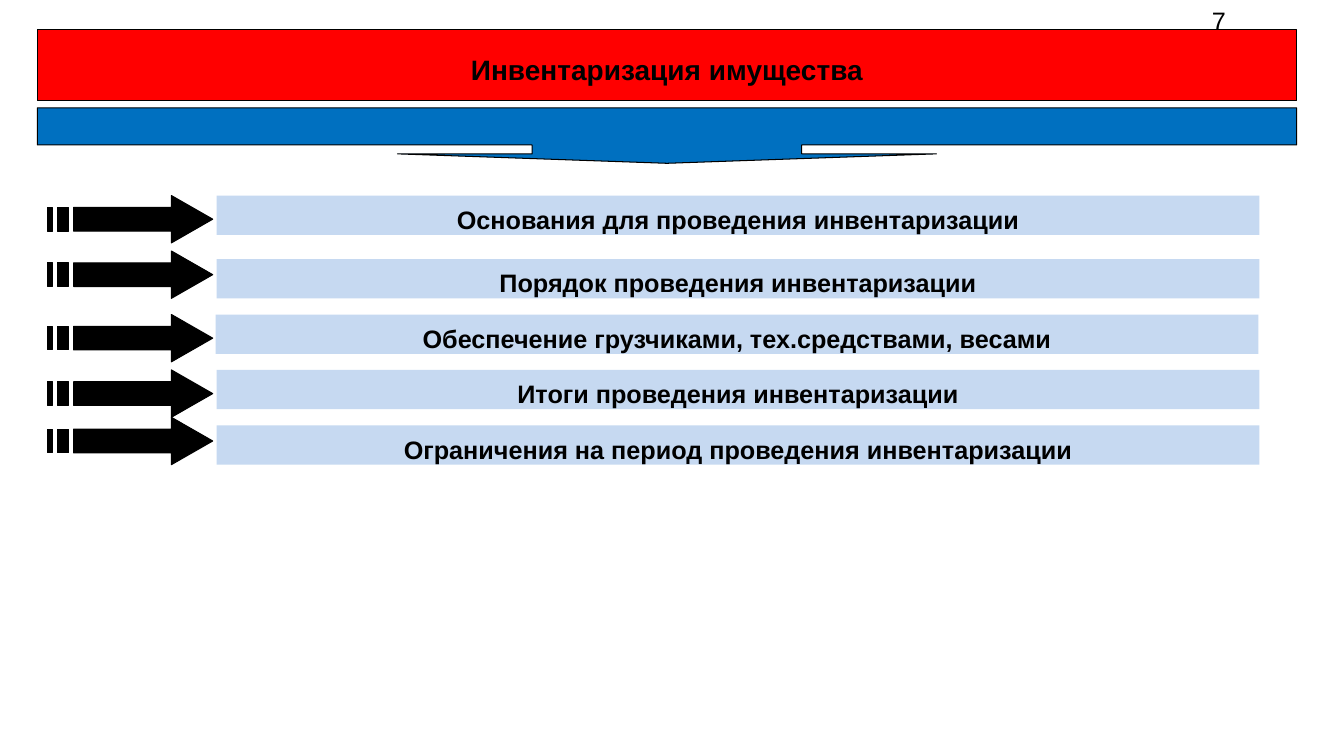
from pptx import Presentation
from pptx.dml.color import RGBColor
from pptx.enum.shapes import MSO_SHAPE
from pptx.enum.text import MSO_ANCHOR, PP_ALIGN
from pptx.util import Inches, Pt

COLORS = {
    "ink": "000000",
    "title": "FF0000",
    "callout": "0070C0",
    "topic": "C6D9F1",
}
TOPICS = [
    ("Основания для проведения инвентаризации", 2.15, 1.94, 1.94),
    ("Порядок проведения инвентаризации", 2.15, 2.57, 2.49),
    ("Обеспечение грузчиками, тех.средствами, весами", 2.14, 3.12, 3.12),
    ("Итоги проведения инвентаризации", 2.15, 3.67, 3.67),
    ("Ограничения на период проведения инвентаризации", 2.15, 4.22, 4.14),
]


def color(name):
    return RGBColor.from_string(COLORS[name])


def paint(shape, fill, outlined):
    shape.shadow.inherit = False
    shape.fill.solid()
    shape.fill.fore_color.rgb = color(fill)
    if outlined:
        shape.line.color.rgb = color("ink")
        shape.line.width = Pt(0.75)
    else:
        shape.line.fill.background()


def write(shape, text, size, bold=False):
    frame = shape.text_frame
    frame.word_wrap = True
    frame.vertical_anchor = MSO_ANCHOR.MIDDLE
    frame.text = text
    paragraph = frame.paragraphs[0]
    font = paragraph.runs[0].font
    font.name = "Arial"
    font.size = Pt(size)
    font.bold = bold
    font.color.rgb = color("ink")
    return paragraph


def add_page_number(slide, left, top, width, height):
    number = slide.shapes.add_textbox(
        Inches(left), Inches(top), Inches(width), Inches(height))
    write(number, "7", 18)


def add_banner(slide, text, size, fill, outlined, left, top, width, height):
    banner = slide.shapes.add_shape(
        MSO_SHAPE.RECTANGLE,
        Inches(left), Inches(top), Inches(width), Inches(height))
    paint(banner, fill, outlined)
    paragraph = write(banner, text, size, bold=True)
    paragraph.alignment = PP_ALIGN.CENTER
    banner.text_frame.margin_top = Inches(0.13)
    return paragraph


def add_callout(slide, left, top, width, height):
    callout = slide.shapes.add_shape(
        MSO_SHAPE.DOWN_ARROW_CALLOUT,
        Inches(left), Inches(top), Inches(width), Inches(height))
    paint(callout, "callout", True)
    for index, ratio in enumerate((4.86, 4.86, 0.17, 0.67)):
        callout.adjustments[index] = ratio


def add_topic(slide, text, left, top, width, height):
    paragraph = add_banner(
        slide, text, 18, "topic", False, left, top, width, height)
    properties = paragraph._p.get_or_add_pPr()
    properties.set("marL", str(Inches(0.1)))
    properties.set("indent", str(-Inches(0.1)))


def add_striped_arrow(slide, left, top, width, height):
    neck = width - 0.41
    upper, lower = height / 4, height * 3 / 4
    head_and_shaft = [
        (neck, 0), (neck, upper), (0.26, upper), (0.26, lower),
        (neck, lower), (neck, height), (width, height / 2),
    ]
    stripes = [
        [(start, upper), (start, lower), (end, lower), (end, upper)]
        for start, end in ((0.1, 0.21), (0, 0.05))
    ]
    contours = [
        [(Inches(left + x), Inches(top + y)) for x, y in contour]
        for contour in [head_and_shaft, *stripes]
    ]
    builder = slide.shapes.build_freeform(*contours[0][0])
    for contour in contours:
        if contour is not contours[0]:
            builder.move_to(*contour[0])
        builder.add_line_segments(contour[1:], close=True)
    paint(builder.convert_to_shape(), "ink", True)


def main():
    presentation = Presentation()
    presentation.slide_width = Inches(13.33)
    presentation.slide_height = Inches(7.5)
    slide = presentation.slides.add_slide(presentation.slide_layouts[6])
    add_page_number(slide, 11.92, 0, 1.11, 0.4)
    add_banner(slide, "Инвентаризация имущества", 20, "title", True,
               0.37, 0.29, 12.49, 0.71)
    add_callout(slide, 0.37, 1.07, 12.49, 0.55)
    for text, left, top, arrow_top in TOPICS:
        add_topic(slide, text, left, top, 10.34, 0.39)
        add_striped_arrow(slide, 0.47, arrow_top, 1.64, 0.47)
    presentation.save("out.pptx")


if __name__ == "__main__":
    main()
